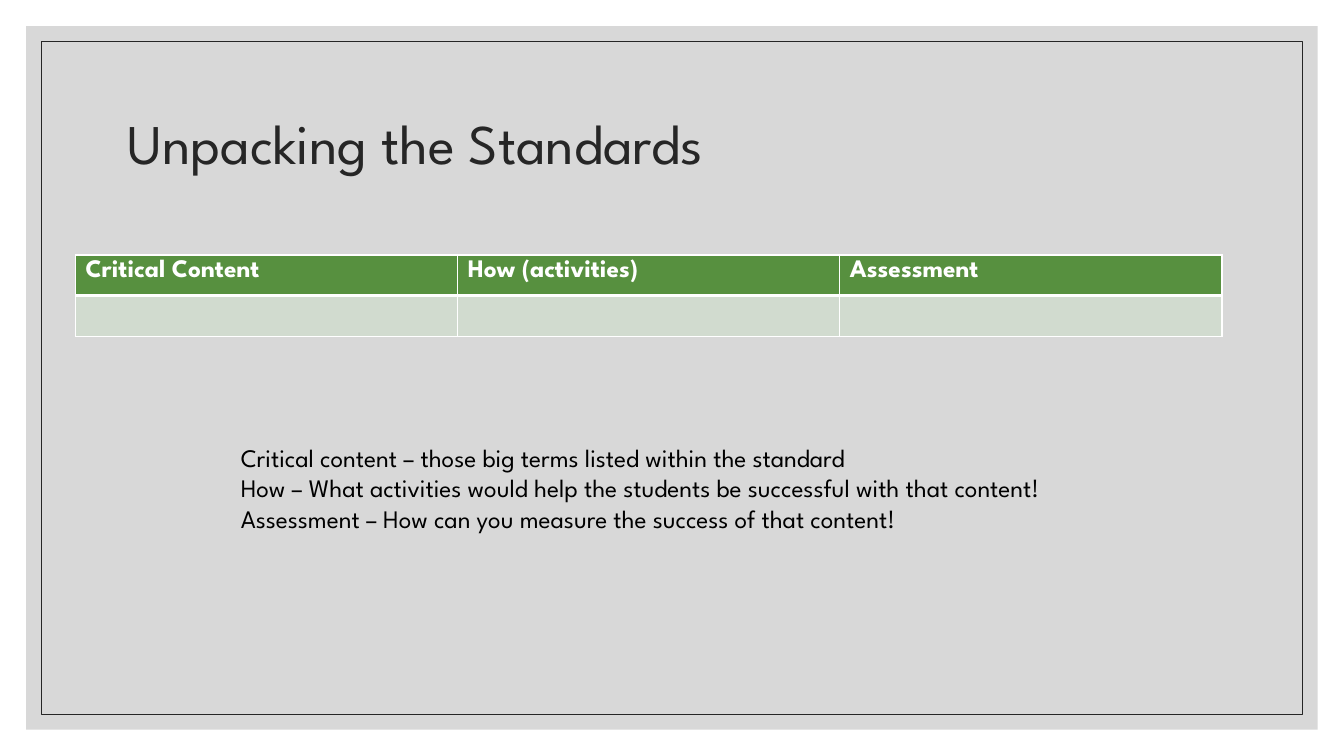
from dataclasses import dataclass

from lxml import etree
from pptx import Presentation
from pptx.dml.color import RGBColor
from pptx.enum.shapes import MSO_SHAPE
from pptx.enum.text import MSO_ANCHOR
from pptx.oxml.ns import qn
from pptx.util import Inches, Pt

RECT = MSO_SHAPE.RECTANGLE
MIDDLE = MSO_ANCHOR.MIDDLE
TOP = MSO_ANCHOR.TOP
WIDE, HIGH = 13.33, 7.5


@dataclass(frozen=True)
class Theme:
    font: str = "League Spartan"
    panel: str = "BFBFBF"
    dark: str = "262626"
    black: str = "000000"
    white: str = "FFFFFF"
    head: str = "57903F"
    body: str = "D1DBCF"
    title: int = 40
    text: int = 18


THEME = Theme()
HEADS = ["Critical Content", "How (activities)", "Assessment"]
NOTES = [
    "Critical content – those big terms listed within the standard",
    "How – What activities would help the students be successful with that content!",
    "Assessment – How can you measure the success of that content!",
]


def inset(gap):
    """Box that leaves the same gap on all four sides of the slide."""
    return gap, gap, WIDE - 2 * gap, HIGH - 2 * gap


def add_run(para, words, size, color, bold=False):
    run = para.add_run()
    run.text = words
    run.font.name = THEME.font
    run.font.size = Pt(size)
    run.font.bold = bold
    run.font.color.rgb = RGBColor.from_string(color)


def add_rect(slide, box):
    rect = slide.shapes.add_shape(RECT, *map(Inches, box))
    rect.shadow.inherit = False
    return rect


def add_frame(slide, outer, inner):
    """Pale translucent panel with a thin line inside it."""
    panel = add_rect(slide, outer)
    panel.fill.solid()
    panel.fill.fore_color.rgb = RGBColor.from_string(THEME.panel)
    panel.line.fill.background()
    color = panel.fill._xPr.find(".//" + qn("a:srgbClr"))
    etree.SubElement(color, qn("a:alpha"), val="60000")

    border = add_rect(slide, inner)
    border.fill.background()
    border.line.color.rgb = RGBColor.from_string(THEME.dark)
    border.line.width = Pt(0.5)


def add_text(slide, box, lines, size, color, anchor=TOP, spacing=None):
    frame = slide.shapes.add_textbox(*map(Inches, box)).text_frame
    frame.word_wrap = True
    frame.vertical_anchor = anchor
    for i, words in enumerate(lines):
        para = frame.add_paragraph() if i else frame.paragraphs[0]
        para.line_spacing = spacing
        add_run(para, words, size, color)


def set_edges(cell, **widths):
    """Draw white cell borders, with widths in points by side."""
    props = cell._tc.get_or_add_tcPr()
    for i, side in enumerate("LRTB"):
        edge = etree.Element(qn("a:ln" + side), w=str(Pt(widths.get(side, 1))))
        fill = etree.SubElement(edge, qn("a:solidFill"))
        etree.SubElement(fill, qn("a:srgbClr"), val=THEME.white)
        props.insert(i, edge)


def add_grid(slide, box, heads, shares):
    """Table with a header row and one empty row, split by height shares."""
    left, top, width, height = box
    grid = slide.shapes.add_table(
        len(shares), len(heads), *map(Inches, box)).table
    for col in grid.columns:
        col.width = Inches(width / len(heads))
    for row, share in zip(grid.rows, shares):
        row.height = Inches(height * share)
    fills = THEME.head, THEME.body
    rule = 3
    for r, row in enumerate(grid.rows):
        for c, cell in enumerate(row.cells):
            cell.fill.solid()
            cell.fill.fore_color.rgb = RGBColor.from_string(fills[r])
            if r == 0:
                add_run(cell.text_frame.paragraphs[0], heads[c],
                        THEME.text, THEME.white, bold=True)
                set_edges(cell, B=rule)
            else:
                set_edges(cell, T=rule)


def add_page(deck):
    slide = deck.slides.add_slide(deck.slide_layouts[6])
    slide.background.fill.solid()
    slide.background.fill.fore_color.rgb = RGBColor.from_string(THEME.white)
    add_frame(slide, inset(0.26), inset(0.41))
    add_text(slide, (1.17, 0.7, 11, 1.5), ["Unpacking the Standards"],
             THEME.title, THEME.dark, MIDDLE, 0.9)
    add_grid(slide, (0.75, 2.53, 11.37, 0.74), HEADS, (0.45, 0.55))
    add_text(slide, (2.29, 4.34, 10.21, 1.01), NOTES, THEME.text, THEME.black)


def main():
    deck = Presentation()
    deck.slide_width, deck.slide_height = Inches(WIDE), Inches(HIGH)
    add_page(deck)
    deck.save("out.pptx")


if __name__ == "__main__":
    main()
